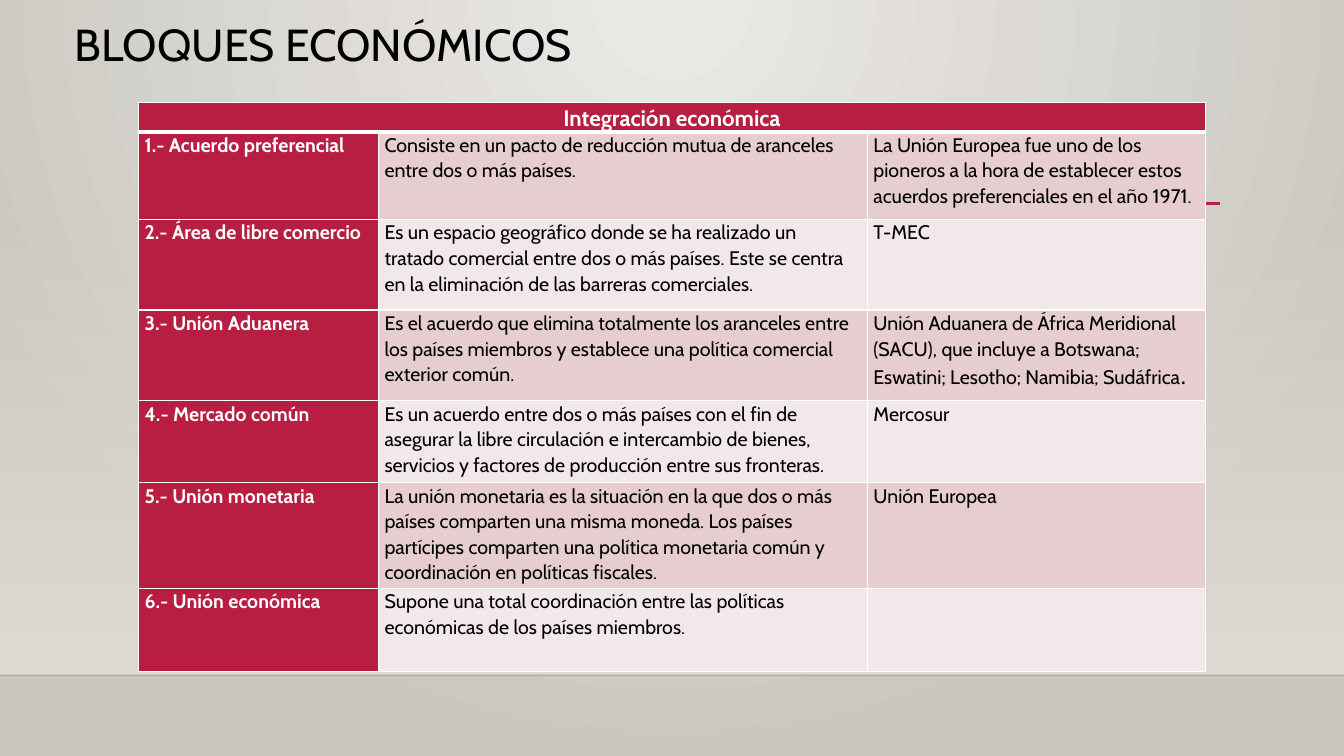
from dataclasses import dataclass

from lxml import etree
from pptx import Presentation
from pptx.dml.color import RGBColor
from pptx.enum.shapes import MSO_CONNECTOR, MSO_SHAPE
from pptx.enum.text import MSO_ANCHOR, MSO_AUTO_SIZE, PP_ALIGN
from pptx.oxml.ns import qn
from pptx.util import Pt

LEFT, CENTER = PP_ALIGN.LEFT, PP_ALIGN.CENTER
TOP, NO_FIT = MSO_ANCHOR.TOP, MSO_AUTO_SIZE.NONE
RECT, STRAIGHT = MSO_SHAPE.RECTANGLE, MSO_CONNECTOR.STRAIGHT

COLORS = {
    "black": "000000", "white": "FFFFFF", "accent": "B71E42",
    "odd": "E6CDCF", "even": "F3E8E9", "wall": "DFDBD5", "floor": "000001",
    "bg_in": "ECEAE7", "bg_out": "CAC7C1",
}
WIDTH, HEIGHT = 960, 540
FLOOR_Y = 482.4
COLUMNS = (171.4, 349.2, 241.9)
HEADER_HEIGHT = 20.2


@dataclass
class Block:
    """One table row: a kind of integration."""
    height: float
    name: str
    meaning: str
    example: str = ""
    end: str = ""


@dataclass
class Rule:
    """A horizontal line."""
    left: float
    right: float
    y: float
    color: str
    width: float
    opacity: int = 100


BLOCKS = [
    Block(62.6, "1.- Acuerdo preferencial",
          "Consiste en un pacto de reducción mutua de aranceles entre dos o más países.",
          "La Unión Europea fue uno de los pioneros a la hora de establecer estos "
          "acuerdos preferenciales en el año 1971."),
    Block(64.8, "2.- Área de libre comercio",
          "Es un espacio geográfico donde se ha realizado un tratado comercial entre dos "
          "o más países. Este se centra en la eliminación de las barreras comerciales.",
          "T-MEC"),
    Block(64.8, "3.- Unión Aduanera",
          "Es el acuerdo que elimina totalmente los aranceles entre los países miembros "
          "y establece una política comercial exterior común.",
          "Unión Aduanera de África Meridional (SACU), que incluye a Botswana; "
          "Eswatini; Lesotho; Namibia; Sudáfrica", "."),
    Block(58.3, "4.- Mercado común",
          "Es un acuerdo entre dos o más países con el fin de asegurar la libre "
          "circulación e intercambio de bienes, servicios y factores de producción "
          "entre sus fronteras.",
          "Mercosur"),
    Block(75.6, "5.- Unión monetaria",
          "La unión monetaria es la situación en la que dos o más países comparten una "
          "misma moneda. Los países partícipes comparten una política monetaria común "
          "y coordinación en políticas fiscales.",
          "Unión Europea"),
    Block(59.8, "6.- Unión económica",
          "Supone una total coordinación entre las políticas económicas de los países "
          "miembros."),
]
RULES = [
    Rule(0, WIDTH, FLOOR_Y, "floor", 1, 20),
    Rule(114.5, 871.2, 145.4, "accent", 2.5),
]


def rgb(name: str) -> RGBColor:
    return RGBColor.from_string(COLORS[name])


def add_text(p, text: str, *, size=14, color="black", bold=False, font="Cabin",
             align=LEFT, spacing=1.07, after=8) -> None:
    p.alignment, p.line_spacing = align, spacing
    p.space_before, p.space_after = Pt(0), Pt(after)
    r = p.add_run()
    r.text = text
    r.font.name, r.font.size, r.font.bold = font, Pt(size), bold
    r.font.color.rgb = rgb(color)


def set_alpha(color_element, percent: int) -> None:
    etree.SubElement(color_element, qn("a:alpha"), val=str(percent * 1000))


def set_gradient(fill, first: str, last: str) -> None:
    fill.gradient()
    for stop, name, position in zip(fill.gradient_stops, (first, last), (0, 1)):
        stop.color.rgb, stop.position = rgb(name), position


def add_rule(s, rule: Rule) -> None:
    sp = s.shapes.add_connector(STRAIGHT, Pt(rule.left), Pt(rule.y),
                                Pt(rule.right), Pt(rule.y))
    sp.line.color.rgb, sp.line.width = rgb(rule.color), Pt(rule.width)
    if rule.opacity < 100:
        set_alpha(sp.line._ln.find(".//" + qn("a:srgbClr")), rule.opacity)
    etree.SubElement(sp._element.spPr, qn("a:effectLst"))


def format_cell(cell, fill: str, top: float = 1, bottom: float = 1) -> None:
    cell.margin_left = cell.margin_right = Pt(4.5)
    cell.margin_top = cell.margin_bottom = Pt(0)
    cell.fill.solid()
    cell.fill.fore_color.rgb = rgb(fill)
    tc_pr = cell._tc.get_or_add_tcPr()
    for i, (side, width) in enumerate(zip("LRTB", (1, 1, top, bottom))):
        ln = etree.Element(qn("a:ln" + side), w=str(Pt(width)))
        solid = etree.SubElement(ln, qn("a:solidFill"))
        etree.SubElement(solid, qn("a:srgbClr"), val=COLORS["white"])
        tc_pr.insert(i, ln)


def add_backdrop(s) -> None:
    # Radial background, lightest at the top centre
    fill = s.background.fill
    set_gradient(fill, "bg_in", "bg_out")
    lin = s._element.find(".//" + qn("a:lin"))
    radial = etree.Element(qn("a:path"), path="circle")
    etree.SubElement(radial, qn("a:fillToRect"), l="43000", t="0", r="43000", b="100000")
    lin.getparent().replace(lin, radial)

    # Wall that fades in towards the floor
    sp = s.shapes.add_shape(RECT, Pt(0), Pt(159.1), Pt(WIDTH), Pt(FLOOR_Y - 159.1))
    sp.shadow.inherit = False
    sp.line.fill.background()
    set_gradient(sp.fill, "wall", "wall")
    sp.fill.gradient_angle = 270
    set_alpha(sp._element.spPr.find(".//" + qn("a:srgbClr")), 0)

    for rule in RULES:
        add_rule(s, rule)


def add_title(s) -> None:
    sp = s.shapes.title
    sp.left, sp.top, sp.width, sp.height = Pt(46.1), Pt(13), Pt(756), Pt(82.8)
    tf = sp.text_frame
    tf.word_wrap, tf.auto_size, tf.vertical_anchor = True, NO_FIT, TOP
    add_text(tf.paragraphs[0], "BLOQUES ECONÓMICOS", size=32, spacing=0.9, after=0)


def add_blocks_table(s) -> None:
    heights = [HEADER_HEIGHT] + [b.height for b in BLOCKS]
    table = s.shapes.add_table(len(heights), len(COLUMNS), Pt(98.8), Pt(73.4),
                               Pt(sum(COLUMNS)), Pt(sum(heights))).table
    for column, width in zip(table.columns, COLUMNS):
        column.width = Pt(width)
    for row, height in zip(table.rows, heights):
        row.height = Pt(height)

    # Header across all columns
    for cell in table.rows[0].cells:
        format_cell(cell, "accent", bottom=3)
    header = table.cell(0, 0)
    header.merge(table.cell(0, len(COLUMNS) - 1))
    add_text(header.text_frame.paragraphs[0], "Integración económica",
             size=16, color="white", bold=True, align=CENTER)

    # One row for each block
    for i, block in enumerate(BLOCKS, 1):
        band = "odd" if i % 2 else "even"
        for j, text in enumerate((block.name, block.meaning, block.example)):
            cell = table.cell(i, j)
            format_cell(cell, band if j else "accent", top=3 if i == 1 else 1)
            if text:
                add_text(cell.text_frame.paragraphs[0], text,
                         color="black" if j else "white", bold=j == 0)
        if block.end:
            add_text(table.cell(i, 2).text_frame.paragraphs[0], block.end,
                     size=16, font="Calibri", after=15)


def main() -> None:
    prs = Presentation()
    prs.slide_width, prs.slide_height = Pt(WIDTH), Pt(HEIGHT)
    s = prs.slides.add_slide(prs.slide_layouts[5])
    add_backdrop(s)
    add_title(s)
    add_blocks_table(s)
    prs.save("out.pptx")


if __name__ == "__main__":
    main()
